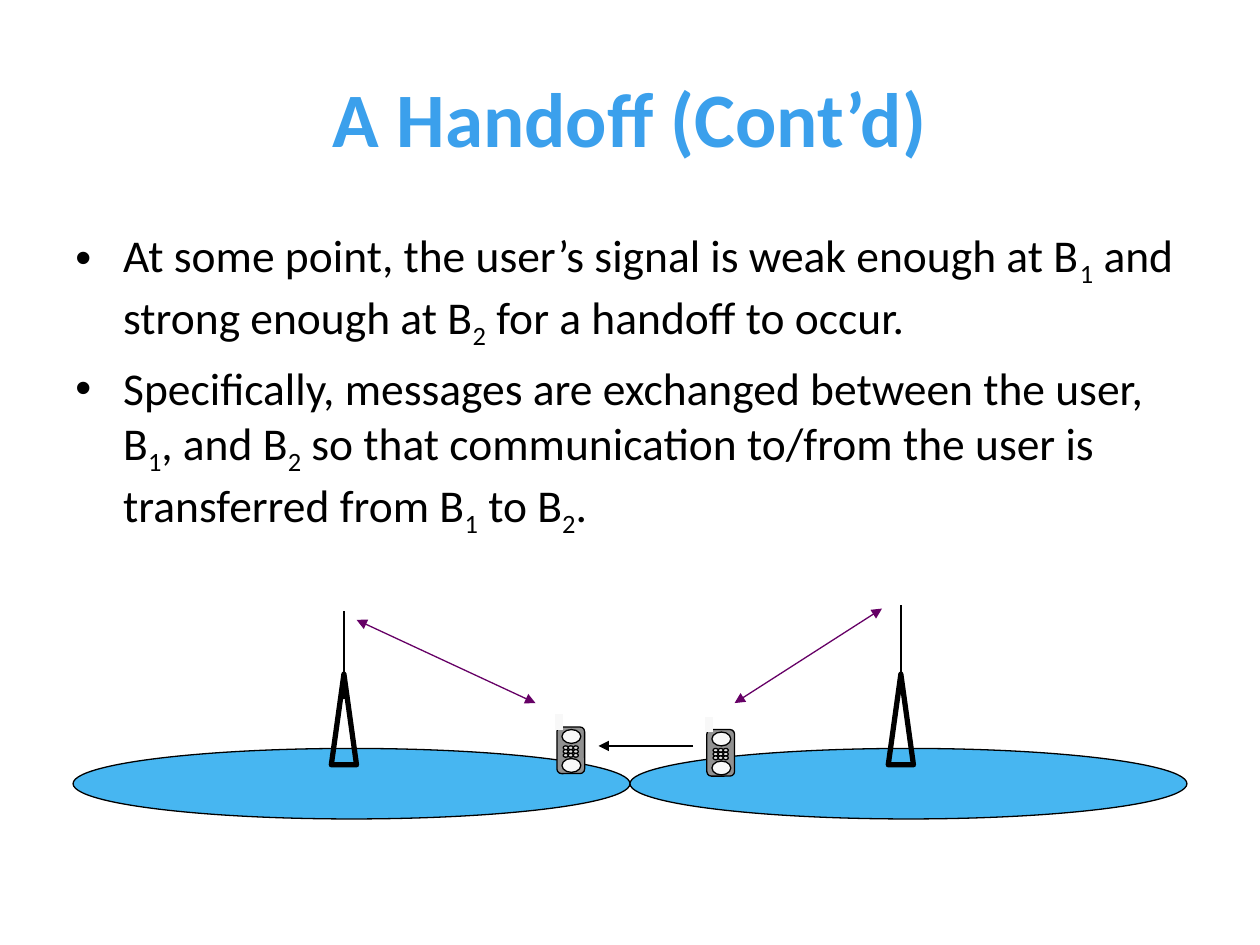
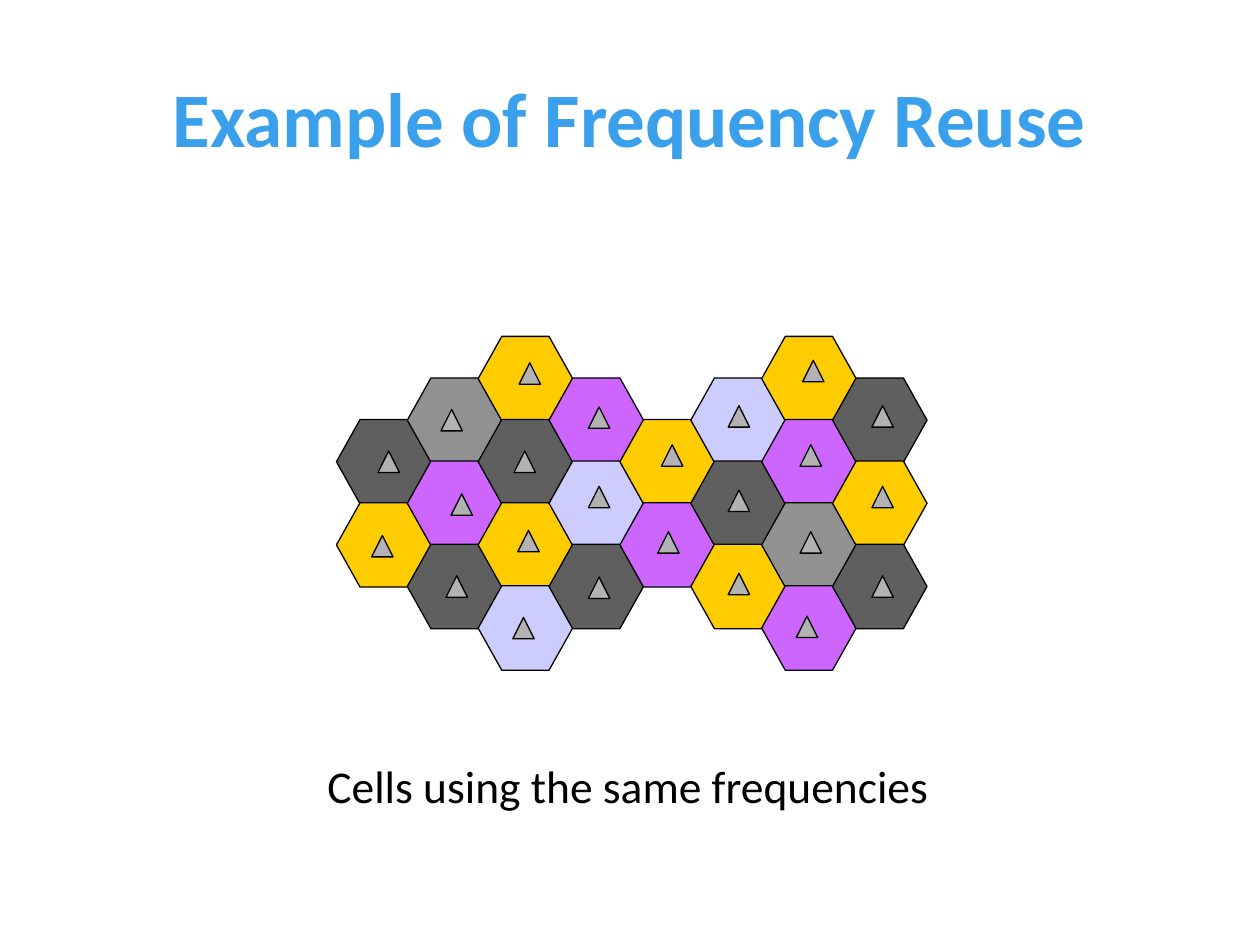
"""Build two slides about mobile handoff and frequency reuse."""
from dataclasses import dataclass

from lxml.etree import SubElement
from pptx import Presentation
from pptx.dml.color import RGBColor
from pptx.enum.shapes import MSO_CONNECTOR, MSO_SHAPE
from pptx.enum.text import MSO_ANCHOR, PP_ALIGN
from pptx.oxml.ns import qn
from pptx.util import Inches, Pt


@dataclass(frozen=True)
class Theme:
    font: str = "Calibri"
    title_size: int = 44
    body_size: int = 26
    title: str = "3BA0EC"
    ink: str = "000000"
    coverage: str = "47B6F1"
    signal: str = "660066"
    phone: str = "919191"
    key: str = "DDDDDD"
    screen: str = "F8F8F8"
    station: str = "B2B2B2"
    gold: str = "FFCC00"
    purple: str = "CC66FF"
    lavender: str = "CCCCFF"
    dark: str = "5F5F5F"
    gray: str = "919191"
    thin: float = 0.75
    tower: float = 3
    antenna: float = 4.5


theme = Theme()
presentation = Presentation()
presentation.slide_width = Inches(10)
presentation.slide_height = Inches(7.5)
column = presentation.slide_width / 10
row = presentation.slide_height / 7.5


def add_figure(slide, kind, left, top, width, height, fill=None, weight=theme.thin):
    shape = slide.shapes.add_shape(
        kind, int(left * column), int(top * row), int(width * column), int(height * row))
    shape.shadow.inherit = False
    if fill:
        shape.fill.solid()
        shape.fill.fore_color.rgb = RGBColor.from_string(fill)
    else:
        shape.fill.background()
    shape.line.color.rgb = RGBColor.from_string(theme.ink)
    shape.line.width = Pt(weight)
    return shape


def add_stroke(slide, start, end, color=theme.ink, weight=theme.thin, arrows=()):
    connector = slide.shapes.add_connector(
        MSO_CONNECTOR.STRAIGHT, int(start[0] * column), int(start[1] * row),
        int(end[0] * column), int(end[1] * row))
    connector.line.color.rgb = RGBColor.from_string(color)
    connector.line.width = Pt(weight)
    properties = connector.element.spPr
    for arrow in arrows:
        SubElement(properties.find(qn("a:ln")), qn(arrow), type="triangle")
    SubElement(properties, qn("a:effectLst"))


blank_layout = presentation.slide_layouts[6]
handoff = presentation.slides.add_slide(blank_layout)
reuse = presentation.slides.add_slide(blank_layout)

for slide, title in ((handoff, "A Handoff (Cont’d)"), (reuse, "Example of Frequency Reuse")):
    title_box = slide.shapes.add_textbox(
        int(0.5 * column), int(0.3 * row), int(9 * column), int(1.25 * row))
    title_box.text_frame.word_wrap = True
    title_box.text_frame.vertical_anchor = MSO_ANCHOR.MIDDLE
    paragraph = title_box.text_frame.paragraphs[0]
    paragraph.alignment = PP_ALIGN.CENTER
    run = paragraph.add_run()
    run.text = title
    run.font.name = theme.font
    run.font.size = Pt(theme.title_size)
    run.font.bold = True
    run.font.color.rgb = RGBColor.from_string(theme.title)

explanation = (
    ("At some point, the user’s signal is weak enough at B", "1",
     " and strong enough at B", "2", " for a handoff to occur."),
    ("Specifically, messages are exchanged between the user, B", "1", ", and B", "2",
     " so that communication to/from the user is transferred from B", "1", " to B", "2", "."),
)
caption = (("Cells using the same frequencies",),)
for slide, left, top, width, height, paragraphs, bulleted in (
        (handoff, 0.5, 1.75, 9, 4.95, explanation, True),
        (reuse, 2.5, 5.97, 5.02, 0.54, caption, False)):
    text_box = slide.shapes.add_textbox(
        int(left * column), int(top * row), int(width * column), int(height * row))
    frame = text_box.text_frame
    frame.word_wrap = bulleted
    for number, pieces in enumerate(paragraphs):
        paragraph = frame.add_paragraph() if number else frame.paragraphs[0]
        if number:
            paragraph.space_before = Pt(0.2 * theme.body_size)
        if bulleted:
            settings = paragraph._p.get_or_add_pPr()
            settings.set("marL", str(Inches(0.38)))
            settings.set("indent", str(-Inches(0.38)))
            SubElement(settings, qn("a:buFont"), typeface="Arial")
            SubElement(settings, qn("a:buChar"), char="•")
        for position, piece in enumerate(pieces):
            run = paragraph.add_run()
            run.text = piece
            run.font.name = theme.font
            run.font.size = Pt(theme.body_size)
            run.font.color.rgb = RGBColor.from_string(theme.ink)
            if position % 2:
                run.font._element.set("baseline", "-25000")

coverage_width = 4.42
for coverage_left, mast_top in ((0.58, 4.85), (5, 4.8)):
    add_figure(handoff, MSO_SHAPE.OVAL, coverage_left, 5.94, coverage_width, 0.56, theme.coverage)
    add_figure(handoff, MSO_SHAPE.ISOSCELES_TRIANGLE, coverage_left + 2.05, 5.35, 0.2, 0.72,
               weight=theme.tower)
    mast = coverage_left + 2.15
    add_stroke(handoff, (mast, mast_top + 0.7), (mast, mast_top))

for left, top in ((5.61, 5.79), (4.42, 5.77)):
    add_figure(handoff, MSO_SHAPE.ROUNDED_RECTANGLE, left, top, 0.22, 0.37, theme.phone)
    for key in range(9):
        key_row, key_column = divmod(key, 3)
        add_figure(handoff, MSO_SHAPE.OVAL, left + 0.05 + 0.04 * key_column,
                   top + 0.15 + 0.03 * key_row, 0.04, 0.03, theme.key)
    add_stroke(handoff, (left + 0.02, top + 0.02), (left + 0.02, top - 0.1),
               theme.screen, theme.antenna)
    for offset in (0.25, 0.02):
        add_figure(handoff, MSO_SHAPE.OVAL, left + 0.04, top + offset, 0.15, 0.11, theme.screen)

both_ends = ("a:headEnd", "a:tailEnd")
add_stroke(handoff, (5.83, 5.58), (7, 4.83), theme.signal, arrows=both_ends)
add_stroke(handoff, (4.25, 5.58), (2.83, 4.92), theme.signal, arrows=both_ends)
add_stroke(handoff, (5.5, 5.92), (4.75, 5.92), arrows=("a:tailEnd",))

cell_columns = (
    (theme.dark, theme.gold),
    (theme.gray, theme.purple, theme.dark),
    (theme.gold, theme.dark, theme.gold, theme.lavender),
    (theme.purple, theme.lavender, theme.dark),
    (theme.gold, theme.purple),
    (theme.lavender, theme.dark, theme.gold),
    (theme.gold, theme.purple, theme.gray, theme.purple),
    (theme.dark, theme.gold, theme.dark),
)
for column_number, colors in enumerate(cell_columns):
    first_top = 3.66 - 0.66 * (len(colors) - 1) / 2
    for row_number, color in enumerate(colors):
        cell = add_figure(reuse, MSO_SHAPE.HEXAGON, 2.67 + 0.5625 * column_number,
                          first_top + 0.66 * row_number, 0.75, 0.67, color)
        cell.adjustments[0] = 0.28

stations = (
    (3, 3.58), (2.95, 4.25),
    (3.5, 3.25), (3.58, 3.92), (3.54, 4.57),
    (4.12, 2.88), (4.08, 3.58), (4.11, 4.21), (4.07, 4.9),
    (4.67, 3.23), (4.67, 3.86), (4.67, 4.58),
    (5.25, 3.53), (5.22, 4.22),
    (5.78, 3.22), (5.78, 3.89), (5.78, 4.55),
    (6.37, 2.86), (6.35, 3.53), (6.35, 4.22), (6.32, 4.89),
    (6.92, 3.22), (6.92, 3.86), (6.92, 4.57),
)
for left, top in stations:
    add_figure(reuse, MSO_SHAPE.ISOSCELES_TRIANGLE, left, top, 0.17, 0.17, theme.station)

presentation.save("out.pptx")
